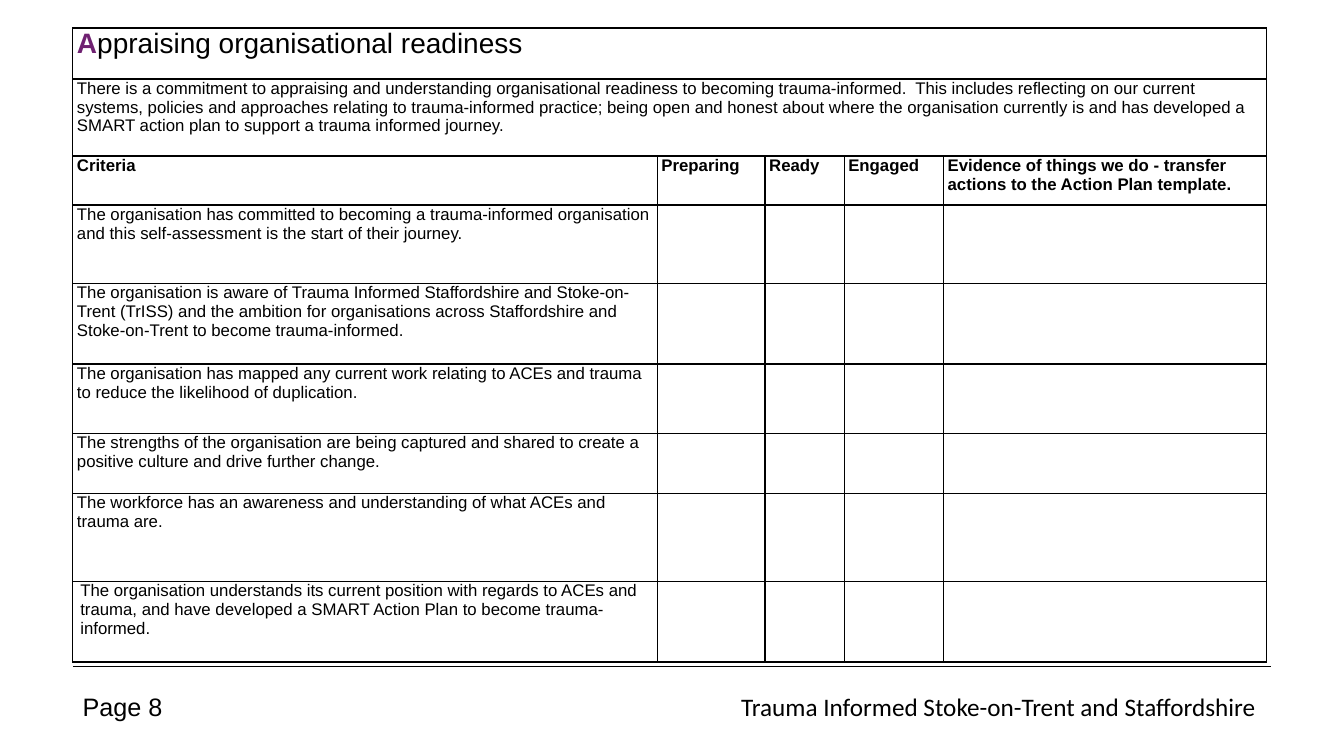
from lxml import etree
from pptx import Presentation
from pptx.dml.color import RGBColor
from pptx.enum.shapes import MSO_CONNECTOR
from pptx.enum.text import MSO_AUTO_SIZE, PP_ALIGN
from pptx.oxml.ns import qn
from pptx.util import Pt

STRAIGHT = MSO_CONNECTOR.STRAIGHT
GROW = MSO_AUTO_SIZE.SHAPE_TO_FIT_TEXT
LEFT, RIGHT = PP_ALIGN.LEFT, PP_ALIGN.RIGHT

COLOURS = {"ink": "000000", "initial": "6F2171"}
BORDER_WIDTH = 1
COLUMN_WIDTHS = [417.5, 77, 56.5, 71, 231]
ROW_HEIGHTS = [36.5, 55, 35, 56, 57.5, 49.5, 43, 63, 57.5]

TITLE = "Appraising organisational readiness"
SUMMARY = (
    "There is a commitment to appraising and understanding organisational readiness to becoming "
    "trauma-informed.  This includes reflecting on our current systems, policies and approaches "
    "relating to trauma-informed practice; being open and honest about where the organisation "
    "currently is and has developed a SMART action plan to support a trauma informed journey."
)
HEADINGS = [
    "Criteria", "Preparing", "Ready", "Engaged",
    "Evidence of things we do - transfer actions to the Action Plan template.",
]
CRITERIA = [
    "The organisation has committed to becoming a trauma-informed organisation and this "
    "self-assessment is the start of their journey.",
    "The organisation is aware of Trauma Informed Staffordshire and Stoke-on-Trent (TrISS) and the "
    "ambition for organisations across Staffordshire and Stoke-on-Trent to become trauma-informed.",
    "The organisation has mapped any current work relating to ACEs and trauma to reduce the "
    "likelihood of duplication.",
    "The strengths of the organisation are being captured and shared to create a positive culture "
    "and drive further change.",
    "The workforce has an awareness and understanding of what ACEs and trauma are.",
    "The organisation understands its current position with regards to ACEs and trauma, and have "
    "developed a SMART Action Plan to become trauma-informed.",
]


class SlideBuilder:
    def __init__(self, slide):
        self.slide = slide

    def style_span(self, span, size, font="Arial", bold=False, colour="ink"):
        span.font.size = Pt(size)
        span.font.name = font
        span.font.bold = bold
        span.font.color.rgb = RGBColor.from_string(COLOURS[colour])

    def text(self, left, top, width, height, words, font, align=LEFT):
        box = self.slide.shapes.add_textbox(Pt(left), Pt(top), Pt(width), Pt(height))
        frame = box.text_frame
        frame.word_wrap = True
        frame.auto_size = GROW
        frame.text = words
        para = frame.paragraphs[0]
        para.alignment = align
        self.style_span(para.runs[0], 18, font)

    def rule(self, left, right, top):
        line = self.slide.shapes.add_connector(STRAIGHT, Pt(left), Pt(top), Pt(right), Pt(top))
        line.line.width = Pt(0.5)
        line.line.color.rgb = RGBColor.from_string(COLOURS["ink"])
        etree.SubElement(line.element.spPr, qn("a:effectLst"))

    def table(self, left, top, widths, heights):
        """Add an unfilled table with a border around every cell."""
        frame = self.slide.shapes.add_table(
            len(heights), len(widths), Pt(left), Pt(top), Pt(sum(widths)), Pt(sum(heights)))
        table = frame.table
        table.first_row = table.horz_banding = False
        for column, width in zip(table.columns, widths):
            column.width = Pt(width)
        for row, height in zip(table.rows, heights):
            row.height = Pt(height)
        for cell in table.iter_cells():
            cell.margin_left = cell.margin_right = Pt(3)
            cell.margin_top = cell.margin_bottom = 0
            cell.fill.background()
            self.cell_border(cell)
        return table

    def cell_border(self, cell):
        properties = cell._tc.get_or_add_tcPr()
        for position, side in enumerate(("a:lnL", "a:lnR", "a:lnT", "a:lnB")):
            edge = etree.Element(qn(side), w=str(Pt(BORDER_WIDTH)))
            fill = etree.SubElement(edge, qn("a:solidFill"))
            etree.SubElement(fill, qn("a:srgbClr"), val=COLOURS["ink"])
            properties.insert(position, edge)

    def cell_text(self, cell, words, size=12, bold=False):
        cell.text_frame.text = words
        self.style_span(cell.text_frame.paragraphs[0].runs[0], size, bold=bold)


def build_readiness_table(builder):
    table = builder.table(52, 20, COLUMN_WIDTHS, ROW_HEIGHTS)
    last_column = len(COLUMN_WIDTHS) - 1
    for row in (0, 1):
        table.cell(row, 0).merge(table.cell(row, last_column))

    title = table.cell(0, 0)
    builder.cell_text(title, TITLE[0], 20, bold=True)
    para = title.text_frame.paragraphs[0]
    builder.style_span(para.runs[0], 20, bold=True, colour="initial")
    rest = para.add_run()
    rest.text = TITLE[1:]
    builder.style_span(rest, 20)

    builder.cell_text(table.cell(1, 0), SUMMARY)
    for column, heading in enumerate(HEADINGS):
        builder.cell_text(table.cell(2, column), heading, bold=True)
    for row, criterion in enumerate(CRITERIA, start=3):
        builder.cell_text(table.cell(row, 0), criterion)
    last_criterion = table.cell(len(ROW_HEIGHTS) - 1, 0)
    last_criterion.margin_left = last_criterion.margin_right = Pt(5.4)


def main():
    deck = Presentation()
    deck.slide_width, deck.slide_height = Pt(960), Pt(540)
    builder = SlideBuilder(deck.slides.add_slide(deck.slide_layouts[6]))
    builder.rule(52, 908, 476)
    builder.text(52, 490.5, 86.5, 29, "Page 8", "Arial")
    build_readiness_table(builder)
    builder.text(520.5, 490.5, 387.5, 29,
                 "Trauma Informed Stoke-on-Trent and Staffordshire ", "Calibri", RIGHT)
    deck.save("out.pptx")


if __name__ == "__main__":
    main()
